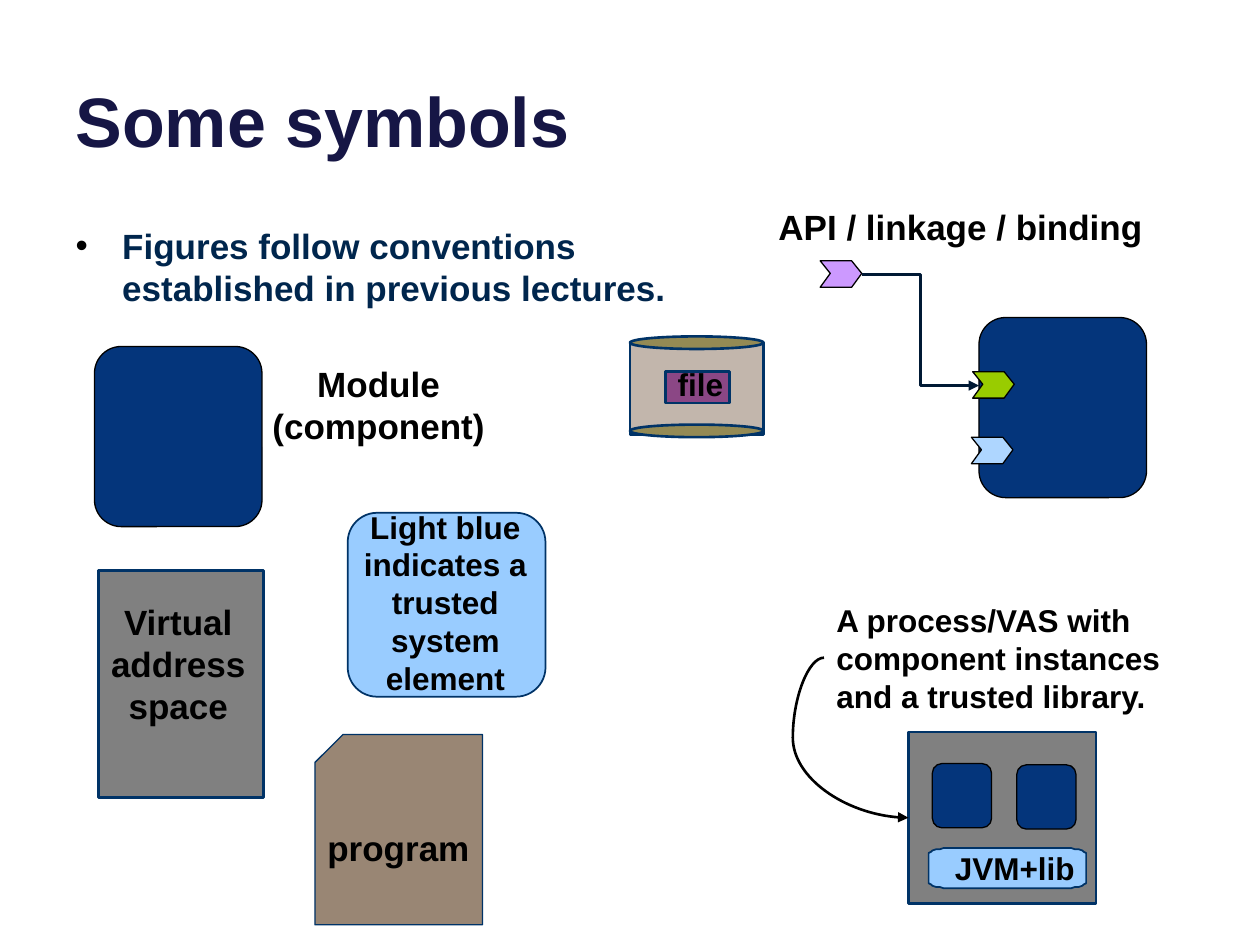
from math import cos, pi, sin

from lxml import etree
from pptx import Presentation
from pptx import util as u
from pptx.dml.color import RGBColor
from pptx.enum import shapes, text
from pptx.oxml.ns import qn

PX = 9144  # EMU per px, 100 px to the inch
FONT = "Arial"
COLORS = {
    "title": "161645", "body": "00264D", "black": "000000", "outline": "003367",
    "module": "04357B", "space": "808080", "trusted": "99CCFF", "program": "998674",
    "disk": "C2B6AC", "disk end": "948A54", "file": "8B4785", "link": "001934",
    "client": "CC99FF", "server": "99CC00", "library": "AED6FF",
}

# Content: boxes are (left, top, width, height)
TITLE = ("Some symbols", (50, -37, 900, 170))
BODY = ("Figures follow conventions established in previous lectures.", (50, 173, 521, 102))

KIND = shapes.MSO_SHAPE
RECT, ROUND, OVAL = KIND.RECTANGLE, KIND.ROUNDED_RECTANGLE, KIND.OVAL
SHAPES = [  # kind, box, fill, line colour, line width
    (RECT, (78, 453, 131, 180), "space", "outline", 1.5),
    (ROUND, (777, 252, 133, 143), "module", "black", 0.75),
    (ROUND, (75, 275, 133, 143), "module", "black", 0.75),
    (ROUND, (276, 407, 157, 146), "trusted", "outline", 1),
    (KIND.SNIP_1_RECTANGLE, (250, 583, 133, 151), "program", "outline", 0.75),
    (RECT, (721, 581, 149, 136), "space", "outline", 1.5),
    (ROUND, (740, 606, 47, 51), "module", "black", 0.75),
    (ROUND, (807, 607, 47, 51), "module", "black", 0.75),
    (RECT, (500, 272, 106, 73), "disk", "outline", 1.5),
    (OVAL, (500, 267, 106, 10), "disk end", "outline", 1.5),
    (OVAL, (500, 337, 106, 10), "disk end", "outline", 1.5),
    (RECT, (528, 295, 51, 25), "file", "outline", 1.5),
]
JVM_PANEL = (737, 673, 125, 32)
PORTS = [(651, 207, "client"), (772, 295, "server"), (771, 347, "library")]
PORT_OUTLINE = [(25, 0), (0, 0), (8, 10), (0, 21), (25, 21), (33, 10)]

CENTER, LEFT = text.PP_ALIGN.CENTER, text.PP_ALIGN.LEFT
LABELS = [  # text, box, size, alignment
    ("Module (component)", (192, 283, 217, 78), 20, CENTER),
    ("API / linkage / binding", (608, 158, 317, 44), 20, LEFT),
    ("Virtual address space", (75, 472, 133, 111), 20, CENTER),
    ("program", (250, 651, 157, 44), 20, LEFT),
    ("Light blue indicates a trusted system element", (275, 398, 157, 162), 18, CENTER),
    ("JVM+lib", (748, 669, 177, 41), 18, LEFT),
    ("A process/VAS with component instances and a trusted library.",
     (654, 472, 307, 101), 18, LEFT),
    ("file", (528, 285, 64, 41), 18, LEFT),
]
CONNECTORS = [  # kind, begin and end, colour, bend (share of the width)
    (shapes.MSO_CONNECTOR.ELBOW, (684, 218, 777, 306), "link", 0.5),
    (shapes.MSO_CONNECTOR.CURVE, (654, 522, 721, 649), "black", -0.37),
]

presentation = Presentation()
presentation.slide_width, presentation.slide_height = 1000 * PX, 750 * PX
slide = presentation.slides.add_slide(presentation.slide_layouts[1])


def emu(values):
    return [value * PX for value in values]


def color(name):
    return RGBColor.from_string(COLORS[name])


def write(shape, words, size, color_name, align):
    frame = shape.text_frame
    frame.text = words
    frame.word_wrap = True
    paragraph = frame.paragraphs[0]
    paragraph.alignment = align
    font = paragraph.runs[0].font
    font.name, font.size, font.bold = FONT, u.Pt(size), True
    font.color.rgb = color(color_name)
    return paragraph


def fill_placeholder(shape, words, box, size, color_name):
    shape.left, shape.top, shape.width, shape.height = emu(box)
    paragraph = write(shape, words, size, color_name, LEFT)
    shape.text_frame.auto_size = text.MSO_AUTO_SIZE.NONE
    return paragraph


def paint(shape, fill, line, width):
    shape.shadow.inherit = False
    shape.fill.solid()
    shape.fill.fore_color.rgb = color(fill)
    shape.line.color.rgb = color(line)
    shape.line.width = u.Pt(width)


def add_outline(points, fill, line, width):
    builder = slide.shapes.build_freeform(*points[0], scale=PX)
    builder.add_line_segments(points[1:], close=True)
    paint(builder.convert_to_shape(), fill, line, width)


def oval_corners(box, radius_x, radius_y, steps=8):
    left, top, width, height = box
    points = []
    for quarter in range(4):
        center_x = left + (width - radius_x if quarter in (0, 3) else radius_x)
        center_y = top + (height - radius_y if quarter < 2 else radius_y)
        for step in range(steps + 1):
            angle = (quarter + step / steps) * pi / 2
            points.append((center_x + radius_x * cos(angle),
                           center_y + radius_y * sin(angle)))
    return points


# Title and bullet
title, body = slide.placeholders
title.text_frame.vertical_anchor = text.MSO_ANCHOR.BOTTOM
fill_placeholder(title, *TITLE, 40, "title")
paragraph = fill_placeholder(body, *BODY, 20, "body")
paragraph.space_before = u.Pt(9)
properties = paragraph._p.get_or_add_pPr()
properties.set("marL", str(37 * PX))
properties.set("indent", str(-37 * PX))
bullet_color = etree.SubElement(properties, qn("a:buClr"))
etree.SubElement(bullet_color, qn("a:srgbClr"), val=COLORS["black"])
etree.SubElement(properties, qn("a:buFont"), typeface=FONT)
etree.SubElement(properties, qn("a:buChar"), char="•")

# Symbols
for kind, box, fill, line, width in SHAPES:
    shape = slide.shapes.add_shape(kind, *emu(box))
    paint(shape, fill, line, width)
    if kind == ROUND:
        shape.adjustments[0] = 0.16
    elif kind == KIND.SNIP_1_RECTANGLE:
        shape._element.spPr.find(qn("a:xfrm")).set("flipH", "1")
add_outline(oval_corners(JVM_PANEL, 20, 5), "trusted", "outline", 1)
for left, top, fill in PORTS:
    add_outline([(left + x, top + y) for x, y in PORT_OUTLINE], fill, "black", 0.75)

# Arrows
for kind, ends, line, bend in CONNECTORS:
    connector = slide.shapes.add_connector(kind, *emu(ends))
    connector.line.color.rgb = color(line)
    connector.line.width = u.Pt(1.5)
    etree.SubElement(connector.line._get_or_add_ln(), qn("a:tailEnd"), type="triangle")
    drawing = connector._element.spPr
    etree.SubElement(drawing, qn("a:effectLst"))
    guides = drawing.find(qn("a:prstGeom")).get_or_add_avLst()
    etree.SubElement(guides, qn("a:gd"), name="adj1", fmla=f"val {round(bend * 100000)}")

# Labels
for words, box, size, align in LABELS:
    write(slide.shapes.add_textbox(*emu(box)), words, size, "black", align)

presentation.save("out.pptx")
